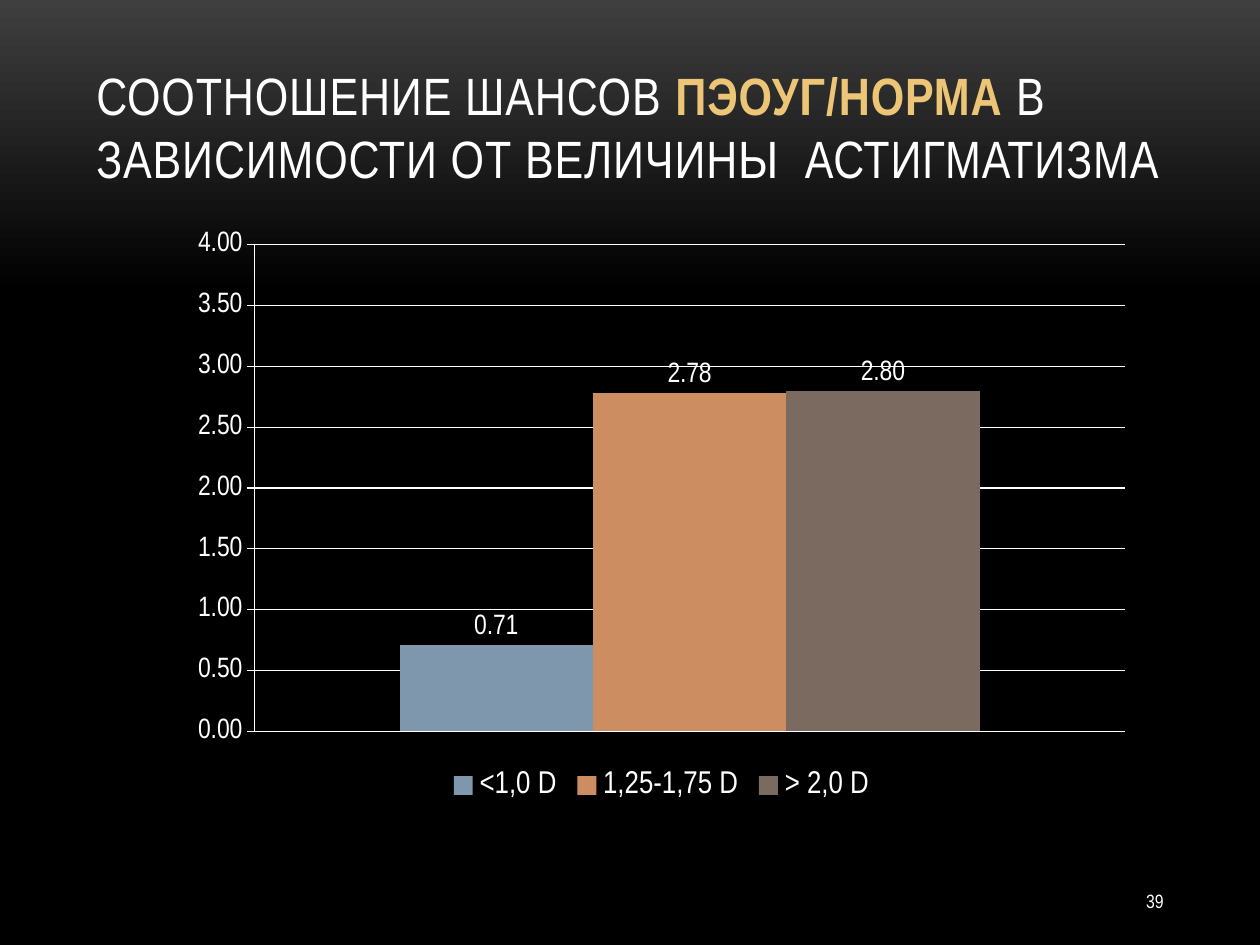
from pptx import Presentation
from pptx.chart.data import CategoryChartData
from pptx.dml.color import RGBColor
from pptx.enum.chart import XL_CHART_TYPE, XL_LABEL_POSITION, XL_LEGEND_POSITION, XL_TICK_MARK
from pptx.enum.text import MSO_ANCHOR, PP_ALIGN
from pptx.util import Pt

COLUMNS = XL_CHART_TYPE.COLUMN_CLUSTERED
OUTSIDE_END = XL_LABEL_POSITION.OUTSIDE_END
LEGEND_BOTTOM = XL_LEGEND_POSITION.BOTTOM
TICK_OUT = XL_TICK_MARK.OUTSIDE
TICK_NONE = XL_TICK_MARK.NONE
BOTTOM, MIDDLE = MSO_ANCHOR.BOTTOM, MSO_ANCHOR.MIDDLE
LEFT, RIGHT = PP_ALIGN.LEFT, PP_ALIGN.RIGHT

WHITE, GOLD, BLACK, GREY = "FFFFFF", "ECC577", "000000", "3F3F3F"


def color(value):
    return RGBColor.from_string(value)


class SlideBuilder:
    font_name = "Arial Narrow"
    number_format = "0.00"

    def __init__(self, slide):
        self.slide = slide

    def style(self, font, size, hue=WHITE, bold=False):
        font.name = self.font_name
        font.size = Pt(size)
        font.bold = bold
        font.color.rgb = color(hue)

    def background(self, stops, angle):
        fill = self.slide.background.fill
        fill.gradient()
        fill.gradient_angle = angle
        for stop, (position, hue) in zip(fill.gradient_stops, stops):
            stop.position = position
            stop.color.rgb = color(hue)

    def text(self, frame, spans, size, anchor, align=LEFT, spacing=0):
        box = self.slide.shapes.add_textbox(*map(Pt, frame))
        box.text_frame.word_wrap = True
        box.text_frame.vertical_anchor = anchor
        para = box.text_frame.paragraphs[0]
        para.alignment = align
        for words, hue, bold in spans:
            span = para.add_run()
            span.text = words
            self.style(span.font, size, hue, bold)
            if spacing:
                span.font._element.set("spc", str(spacing))

    def column_chart(self, frame, category, series):
        data = CategoryChartData(number_format=self.number_format)
        data.categories = [category]
        for name, value, _ in series:
            data.add_series(name, [value])
        chart = self.slide.shapes.add_chart(COLUMNS, *map(Pt, frame), data).chart
        self.style(chart.font, 10)
        chart.has_title = False
        chart.has_legend = True
        chart.legend.position = LEGEND_BOTTOM
        chart.legend.include_in_layout = False
        self.style(chart.legend.font, 18)
        chart.category_axis.visible = False
        self.value_axis(chart.value_axis)
        plot = chart.plots[0]
        plot.gap_width = 150
        plot.overlap = 0
        plot.vary_by_categories = False
        for bars, (_, _, hue) in zip(plot.series, series):
            bars.format.fill.solid()
            bars.format.fill.fore_color.rgb = color(hue)
            self.data_labels(bars.data_labels)

    def value_axis(self, axis):
        axis.minimum_scale = 0
        axis.maximum_scale = 4
        axis.major_unit = 0.5
        axis.major_tick_mark = TICK_OUT
        axis.minor_tick_mark = TICK_NONE
        axis.has_major_gridlines = True
        for line in (axis.format.line, axis.major_gridlines.format.line):
            line.color.rgb = color(WHITE)
            line.width = Pt(0.75)
        self.number_labels(axis.tick_labels)

    def data_labels(self, labels):
        labels.show_value = True
        labels.position = OUTSIDE_END
        self.number_labels(labels)

    def number_labels(self, labels):
        labels.number_format = self.number_format
        labels.number_format_is_linked = False
        self.style(labels.font, 16)


def main():
    deck = Presentation()
    deck.slide_width, deck.slide_height = Pt(720), Pt(540)
    page = SlideBuilder(deck.slides.add_slide(deck.slide_layouts[6]))
    page.background([(0, GREY), (0.31, BLACK)], 270)
    title = [
        ("СООТНОШЕНИЕ ШАНСОВ ", WHITE, False),
        ("ПЭОУГ/НОРМА ", GOLD, True),
        ("В ЗАВИСИМОСТИ ОТ ВЕЛИЧИНЫ  АСТИГМАТИЗМА", WHITE, False),
    ]
    page.text((48, 21.6, 653, 90), title, 30, BOTTOM, spacing=50)
    page.text((594, 500.4, 78, 28.8), [("39", WHITE, False)], 11, MIDDLE, RIGHT)
    page.column_chart((102.2, 126, 551.5, 334.8), "1", [
        ("<1,0 D", 0.71, "7E97AD"),
        ("1,25-1,75 D", 2.78, "CC8E60"),
        ("> 2,0 D", 2.8, "7A6A60"),
    ])
    deck.save("out.pptx")


if __name__ == "__main__":
    main()
